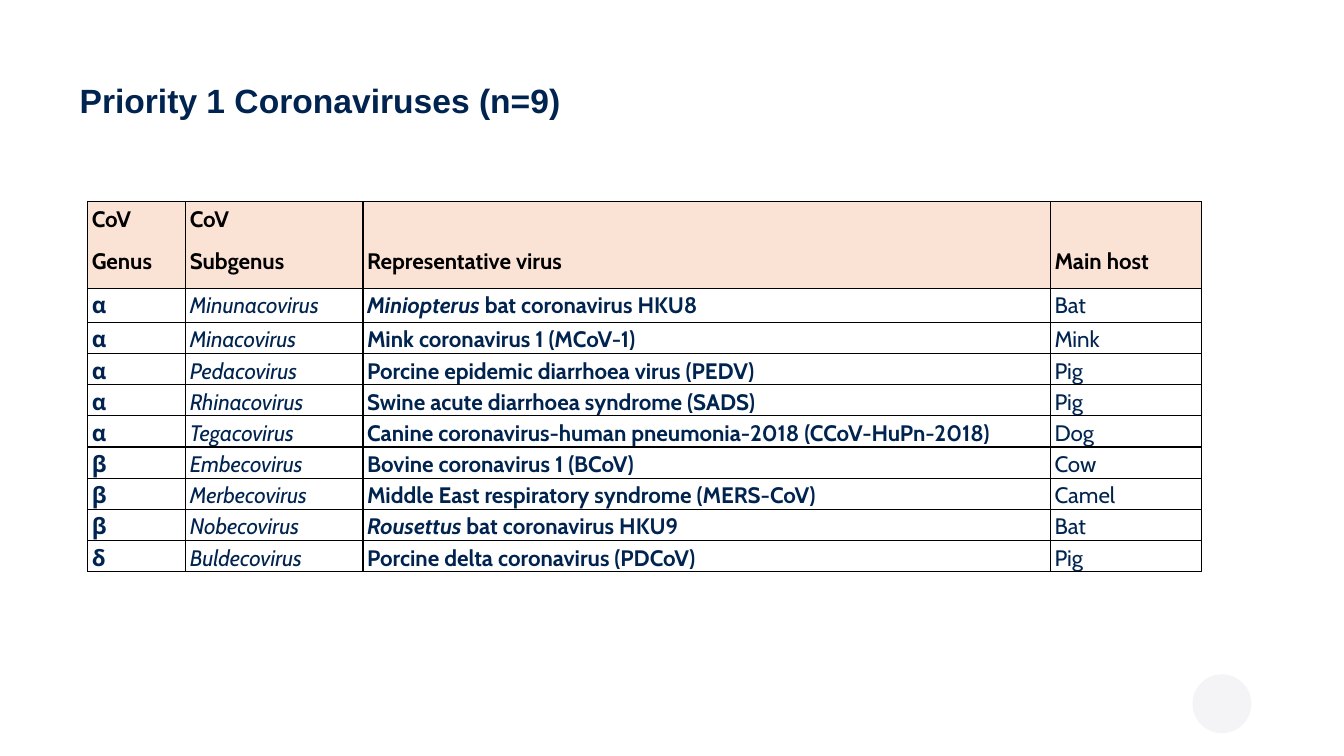
from dataclasses import dataclass

import lxml.etree
import pptx
import pptx.dml.color
import pptx.enum.shapes
import pptx.enum.text
import pptx.oxml.ns
import pptx.table
import pptx.util

Pt = pptx.util.Pt
COLORS = {"navy": "00244F", "black": "000000", "peach": "FAE2D5", "circle": "F4F4F6"}
COLUMN_WIDTHS = (70, 126.7, 491, 108)
SPACER_HEIGHT, HEADER_HEIGHT, FIRST_ROW_HEIGHT, ROW_HEIGHT = 20.16, 61.9, 24.5, 20.16
SECOND_LINE_OFFSET = 30.5
HEADERS = (("CoV", "Genus"), ("CoV", "Subgenus"), ("Representative virus",), ("Main host",))


@dataclass(frozen=True)
class Virus:
    genus: str
    subgenus: str
    name: str
    host: str
    italic_prefix: str = ""


VIRUSES = (
    Virus("α", "Minunacovirus", " bat coronavirus HKU8", "Bat", "Miniopterus"),
    Virus("α", "Minacovirus", "Mink coronavirus 1 (MCoV-1)", "Mink"),
    Virus("α", "Pedacovirus", "Porcine epidemic diarrhoea virus (PEDV)", "Pig"),
    Virus("α", "Rhinacovirus", "Swine acute diarrhoea syndrome (SADS)", "Pig"),
    Virus("α", "Tegacovirus", "Canine coronavirus-human pneumonia-2018 (CCoV-HuPn-2018)", "Dog"),
    Virus("β", "Embecovirus", "Bovine coronavirus 1 (BCoV)", "Cow"),
    Virus("β", "Merbecovirus", "Middle East respiratory syndrome (MERS-CoV)", "Camel"),
    Virus("β", "Nobecovirus", " bat coronavirus HKU9", "Bat", "Rousettus"),
    Virus("δ", "Buldecovirus", "Porcine delta coronavirus (PDCoV)", "Pig"),
)


def rgb(name: str) -> pptx.dml.color.RGBColor:
    return pptx.dml.color.RGBColor.from_string(COLORS[name])


def set_borders(cell: pptx.table._Cell, visible_sides: str) -> None:
    properties = cell._tc.get_or_add_tcPr()
    qualified = pptx.oxml.ns.qn
    for side in "LRTB":
        line = lxml.etree.SubElement(properties, qualified(f"a:ln{side}"), w=str(Pt(1)))
        if side in visible_sides:
            fill = lxml.etree.SubElement(line, qualified("a:solidFill"))
            lxml.etree.SubElement(fill, qualified("a:srgbClr"), val=COLORS["black"])
        else:
            lxml.etree.SubElement(line, qualified("a:noFill"))


def format_cell(cell: pptx.table._Cell, fill: str = "", sides: str = "LRTB") -> None:
    set_borders(cell, sides)
    cell.margin_left = cell.margin_right = Pt(3)
    cell.margin_top = cell.margin_bottom = 0
    if fill:
        cell.fill.solid()
        cell.fill.fore_color.rgb = rgb(fill)
    else:
        cell.fill.background()


def format_paragraph(paragraph, color: str, bold: bool, italic: bool = False) -> None:
    paragraph.line_spacing = 1.15
    paragraph.space_after = Pt(8)
    font = paragraph.font
    font.name, font.size, font.bold = "Cabin", Pt(16), bold
    font.color.rgb = rgb(color)
    if italic:
        font.italic = True


def fill_header(cell: pptx.table._Cell, lines: tuple[str, ...]) -> None:
    format_cell(cell, "peach")
    if len(lines) == 1:
        cell.margin_top = Pt(SECOND_LINE_OFFSET)
    cell.text = "\n".join(lines)
    for paragraph in cell.text_frame.paragraphs:
        format_paragraph(paragraph, "black", bold=True)


def fill_virus(table: pptx.table.Table, row: int, virus: Virus) -> None:
    texts = (virus.genus, virus.subgenus, virus.name, virus.host)
    for column, text in enumerate(texts):
        cell = table.cell(row, column)
        format_cell(cell)
        paragraph = cell.text_frame.paragraphs[0]
        format_paragraph(paragraph, "navy", bold=column in (0, 2), italic=column == 1)
        if column == 2 and virus.italic_prefix:
            prefix = paragraph.add_run()
            prefix.text = virus.italic_prefix
            prefix.font.italic = True
        paragraph.add_run().text = text


def add_title(slide, text: str) -> None:
    title = slide.shapes.title
    title.left, title.top, title.width, title.height = Pt(56.9), Pt(55.4), Pt(828), Pt(35.3)
    frame = title.text_frame
    frame.text = text
    frame.word_wrap = True
    frame.auto_size = pptx.enum.text.MSO_AUTO_SIZE.NONE
    frame.vertical_anchor = pptx.enum.text.MSO_ANCHOR.MIDDLE
    frame.margin_left, frame.margin_right = 0, Pt(7.2)
    frame.margin_top = frame.margin_bottom = Pt(3.6)
    paragraph = frame.paragraphs[0]
    paragraph.alignment = pptx.enum.text.PP_ALIGN.LEFT
    paragraph.line_spacing = 0.9
    paragraph.space_after = Pt(6)
    font = paragraph.font
    font.name, font.size, font.bold = "Arial", Pt(24), True
    font.color.rgb = rgb("navy")


def add_circle(slide) -> None:
    circle = slide.shapes.add_shape(
        pptx.enum.shapes.MSO_SHAPE.OVAL, Pt(851.8), Pt(481.7), Pt(42), Pt(42))
    circle.shadow.inherit = False
    circle.fill.solid()
    circle.fill.fore_color.rgb = rgb("circle")
    circle.line.fill.background()


def add_virus_table(slide) -> None:
    heights = [SPACER_HEIGHT, HEADER_HEIGHT, FIRST_ROW_HEIGHT]
    heights += [ROW_HEIGHT] * (len(VIRUSES) - 1)
    table = slide.shapes.add_table(
        len(heights), len(COLUMN_WIDTHS), Pt(62.6), Pt(123.8),
        Pt(sum(COLUMN_WIDTHS)), Pt(sum(heights))).table
    table.first_row = table.horz_banding = False
    for column, width in zip(table.columns, COLUMN_WIDTHS):
        column.width = Pt(width)
    for row, height in zip(table.rows, heights):
        row.height = Pt(height)
    for cell in table.rows[0].cells:
        format_cell(cell, sides="B")
        cell.text_frame.paragraphs[0].font.size = Pt(12)
    table.cell(0, 0).merge(table.cell(0, len(COLUMN_WIDTHS) - 1))
    for column, lines in enumerate(HEADERS):
        fill_header(table.cell(1, column), lines)
    for row, virus in enumerate(VIRUSES, start=2):
        fill_virus(table, row, virus)


def main() -> None:
    """Build the slide listing the priority 1 coronaviruses."""
    presentation = pptx.Presentation()
    presentation.slide_width, presentation.slide_height = Pt(960), Pt(540)
    slide = presentation.slides.add_slide(presentation.slide_layouts[5])
    add_circle(slide)
    add_virus_table(slide)
    add_title(slide, "Priority 1 Coronaviruses (n=9)")
    presentation.save("out.pptx")


if __name__ == "__main__":
    main()
